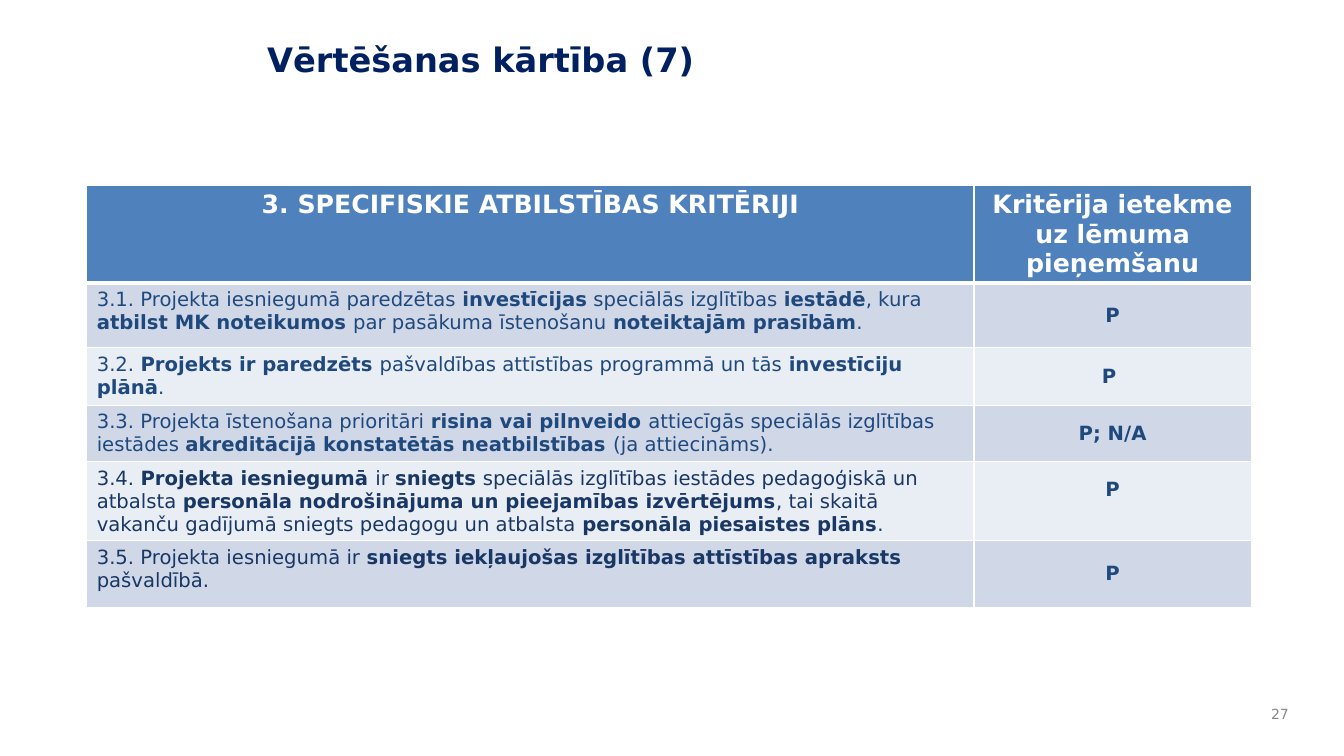
import pptx
import pptx.util
import pptx.dml.color
import pptx.enum.text
import pptx.oxml

Inches = pptx.util.Inches
Pt = pptx.util.Pt
ALIGN = pptx.enum.text.PP_ALIGN
ANCHOR = pptx.enum.text.MSO_ANCHOR
NAVY, BLUE, WHITE = "193764", "1F497D", "FFFFFF"
HEADER_FILL, BAND_FILLS = "4F81BD", ("D0D8E8", "E9EDF4")
NAMESPACE = "http://schemas.openxmlformats.org/drawingml/2006/main"

HEADERS = ("3. SPECIFISKIE ATBILSTĪBAS KRITĒRIJI", "Kritērija ietekme uz lēmuma pieņemšanu")
CRITERIA = (
    ("3.1. Projekta iesniegumā paredzētas **investīcijas** speciālās izglītības **iestādē**, kura "
     "**atbilst MK noteikumos **par pasākuma īstenošanu **noteiktajām prasībām**.",
     "P", BLUE, 0.64, 0.05),
    ("3.2. **Projekts ir paredzēts **pašvaldības attīstības programmā un tās "
     "**investīciju plānā**.", "P ", BLUE, 0.57, 0.05),
    ("3.3. Projekta īstenošana prioritāri **risina vai pilnveido **attiecīgās speciālās izglītības "
     "iestādes **akreditācijā konstatētās neatbilstības **(ja attiecināms).",
     "P; N/A", BLUE, 0.56, 0.05),
    ("3.4. **Projekta iesniegumā **ir **sniegts **speciālās izglītības iestādes pedagoģiskā un "
     "atbalsta **personāla nodrošinājuma un pieejamības izvērtējums**, tai skaitā vakanču gadījumā "
     "sniegts pedagogu un atbalsta **personāla piesaistes plāns**.", "P", NAVY, 0.78, 0.28),
    ("3.5. Projekta iesniegumā ir **sniegts iekļaujošas izglītības attīstības apraksts **"
     "pašvaldībā.", "P", NAVY, 0.66, 0.05),
)


def color(value):
    return pptx.dml.color.RGBColor.from_string(value)


def write(frame, text, size=14, ink=BLUE, align=ALIGN.LEFT, font="DejaVu Sans"):
    paragraph = frame.paragraphs[0]
    paragraph.alignment = align
    for index, part in enumerate(text.split("**")):
        if part:
            run = paragraph.add_run()
            run.text = part
            run.font.name = font
            run.font.size = Pt(size)
            run.font.bold = index % 2 == 1
            run.font.color.rgb = color(ink)


def set_borders(cell, top, bottom):
    properties = cell._tc.get_or_add_tcPr()
    widths = {"lnL": 1, "lnR": 1, "lnT": top, "lnB": bottom}
    for index, (side, width) in enumerate(widths.items()):
        properties.insert(index, pptx.oxml.parse_xml(
            f'<a:{side} xmlns:a="{NAMESPACE}" w="{Pt(width)}"><a:solidFill>'
            f'<a:srgbClr val="{WHITE}"/></a:solidFill></a:{side}>'))


class CriteriaSlide:
    def __init__(self, presentation):
        self.slide = presentation.slides.add_slide(presentation.slide_layouts[5])

    def title(self, text, left, top, width, height):
        shape = self.slide.shapes.title
        shape.left, shape.top = Inches(left), Inches(top)
        shape.width, shape.height = Inches(width), Inches(height)
        shape.text_frame.vertical_anchor = ANCHOR.TOP
        write(shape.text_frame, f"**{text}**", size=24, ink="002060")

    def page_number(self, text, left, top, width, height):
        shape = self.slide.shapes.add_textbox(
            Inches(left), Inches(top), Inches(width), Inches(height))
        shape.text_frame.word_wrap = True
        shape.text_frame.vertical_anchor = ANCHOR.MIDDLE
        write(shape.text_frame, text, size=10, ink="898989", align=ALIGN.RIGHT)

    def cell(self, cell, text, fill, anchor=ANCHOR.TOP, top=1, bottom=1, margin=0.05, **style):
        cell.fill.solid()
        cell.fill.fore_color.rgb = color(fill)
        cell.vertical_anchor = anchor
        cell.margin_bottom = Inches(margin)
        set_borders(cell, top, bottom)
        write(cell.text_frame, text, **style)

    def table(self, left, top, widths, header_height):
        heights = [header_height] + [criterion[3] for criterion in CRITERIA]
        table = self.slide.shapes.add_table(
            len(heights), len(widths), Inches(left), Inches(top),
            Inches(sum(widths)), Inches(sum(heights))).table
        for column, width in zip(table.columns, widths):
            column.width = Inches(width)
        for row, height in zip(table.rows, heights):
            row.height = Inches(height)
        for index, header in enumerate(HEADERS):
            self.cell(table.cell(0, index), f"**{header}**", HEADER_FILL, bottom=3,
                      size=18, ink=WHITE, align=ALIGN.CENTER)
        for row, (criterion, impact, ink, _, margin) in enumerate(CRITERIA, 1):
            fill = BAND_FILLS[(row - 1) % 2]
            border = 3 if row == 1 else 1
            self.cell(table.cell(row, 0), criterion, fill, top=border, ink=ink)
            self.cell(table.cell(row, 1), f"**{impact}**", fill, anchor=ANCHOR.MIDDLE,
                      top=border, margin=margin, align=ALIGN.CENTER)


def main():
    presentation = pptx.Presentation()
    presentation.slide_width, presentation.slide_height = Inches(13.33), Inches(7.5)
    page = CriteriaSlide(presentation)
    page.title("Vērtēšanas kārtība (7)", 2.55, 0.34, 10.12, 1.17)
    page.table(0.86, 1.84, (8.8, 2.75), 0.97)
    page.page_number("27", 12.44, 6.92, 0.44, 0.33)
    presentation.save("out.pptx")


if __name__ == "__main__":
    main()
